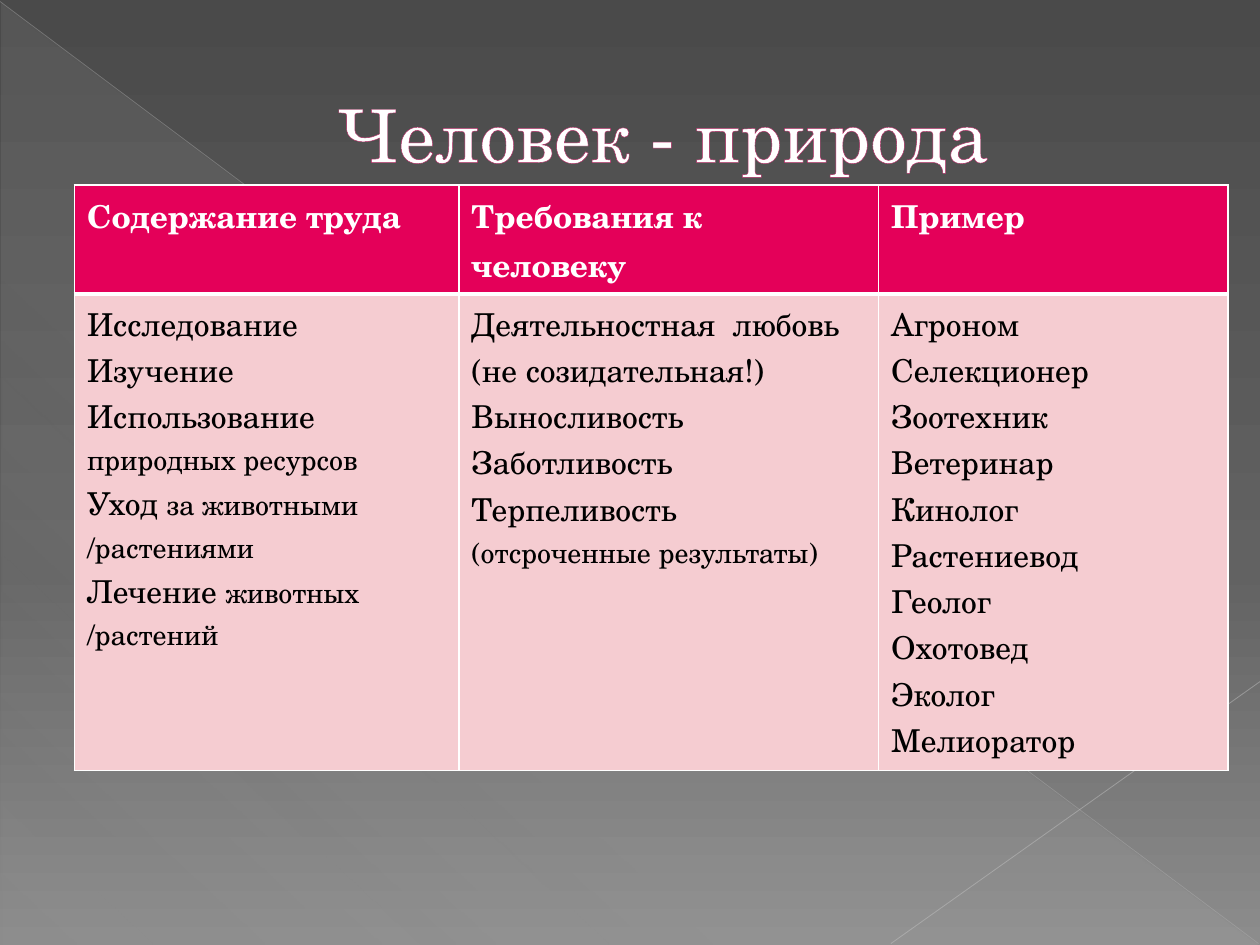
from lxml.etree import SubElement
from pptx import Presentation
from pptx.dml.color import RGBColor
from pptx.enum.shapes import MSO_CONNECTOR, MSO_SHAPE
from pptx.enum.text import MSO_ANCHOR, PP_ALIGN
from pptx.oxml.ns import qn
from pptx.util import Cm, Pt

WHITE = RGBColor(0xFF, 0xFF, 0xFF)
BLACK = RGBColor(0x00, 0x00, 0x00)
CRIMSON = RGBColor(0xE4, 0x00, 0x59)
BLUSH = RGBColor(0xF5, 0xCC, 0xD1)
PLUM = RGBColor(0xB1, 0x27, 0x61)
MIST = RGBColor(0xD2, 0xD2, 0xD2)
SILVER = RGBColor(0xBF, 0xBF, 0xBF)
PALE = RGBColor(0xC6, 0xC6, 0xC6)
BACKDROP = [(0, RGBColor(0x4A, 0x4A, 0x4A), 100),
            (60, RGBColor(0x62, 0x62, 0x62), 100),
            (100, RGBColor(0x8C, 0x8C, 0x8C), 100)]
VEIL = [(0, MIST, 10), (70, MIST, 8), (100, MIST, 1)]

SMALL = 16
HEADERS = ["Содержание труда", "Требования к человеку", "Пример"]
# Each paragraph is a list of spans: (text,) or (text, size)
BODY = [
    [[("Исследование",)], [("Изучение",)],
     [("Использование ",), ("природных ресурсов", SMALL)],
     [("Уход ",), ("за животными /растениями", SMALL)],
     [("Лечение ",), ("животных /растений", SMALL)]],
    [[("Деятельностная  любовь (не созидательная!)",)], [("Выносливость",)],
     [("Заботливость",)], [("Терпеливость",)],
     [("(отсроченные результаты)", SMALL)]],
    [[(job,)] for job in ("Агроном", "Селекционер", "Зоотехник", "Ветеринар",
                          "Кинолог", "Растениевод", "Геолог", "Охотовед",
                          "Эколог", "Мелиоратор")],
]


def add_color(parent, color, opacity=100):
    node = SubElement(parent, qn("a:srgbClr"), val=str(color))
    if opacity < 100:
        SubElement(node, qn("a:alpha"), val=str(opacity * 1000))


class SlideBuilder:
    font = "TeX Gyre Schola"
    size = 18

    def __init__(self, page):
        self.page = page

    def gradient(self, fill, element, stops, angle):
        fill.gradient()
        fill.gradient_angle = 360 - angle
        stop_list = next(element.iter(qn("a:gsLst")))
        for stop in list(stop_list):
            stop_list.remove(stop)
        for position, color, opacity in stops:
            stop = SubElement(stop_list, qn("a:gs"), pos=str(position * 1000))
            add_color(stop, color, opacity)

    def background(self, stops, angle):
        self.gradient(self.page.background.fill, self.page.element, stops, angle)

    def triangle(self, left, top, width, height, stops, angle):
        shape = self.page.shapes.add_shape(
            MSO_SHAPE.RIGHT_TRIANGLE, Cm(left), Cm(top), Cm(width), Cm(height))
        shape.shadow.inherit = False
        shape.line.fill.background()
        self.gradient(shape.fill, shape.element.spPr, stops, angle)

    def line(self, start, end, color, weight, opacity):
        line = self.page.shapes.add_connector(
            MSO_CONNECTOR.STRAIGHT, *map(Cm, start + end))
        line.line.width = Pt(weight)
        line.line.color.rgb = color
        properties = line.element.spPr
        SubElement(next(properties.iter(qn("a:srgbClr"))), qn("a:alpha"),
                   val=str(opacity * 1000))
        SubElement(properties, qn("a:effectLst"))

    def span(self, para, text, color, size=None, bold=False):
        span = para.add_run()
        span.text = text
        style = {"name": self.font, "size": Pt(size or self.size), "bold": bold}
        for name, value in style.items():
            setattr(span.font, name, value)
        span.font.color.rgb = color
        return span

    def title(self, text, left, top, width, height):
        box = self.page.shapes.add_textbox(Cm(left), Cm(top), Cm(width), Cm(height))
        frame = box.text_frame
        for name, value in {"word_wrap": True,
                            "vertical_anchor": MSO_ANCHOR.MIDDLE}.items():
            setattr(frame, name, value)
        para = frame.paragraphs[0]
        para.alignment = PP_ALIGN.CENTER
        properties = para._p.get_or_add_pPr()
        properties.set("marL", str(Cm(1.35)))
        properties.set("indent", "0")
        span = self.span(para, text, WHITE, 42)
        # Thin outline around the letters
        run_style = span._r.get_or_add_rPr()
        outline = SubElement(run_style, qn("a:ln"), w=str(Pt(0.5)))
        add_color(SubElement(outline, qn("a:solidFill")), PLUM)
        run_style.insert(0, outline)

    def cell(self, cell, paragraphs, color, fill, bold, borders):
        for index, spans in enumerate(paragraphs):
            frame = cell.text_frame
            para = frame.add_paragraph() if index else frame.paragraphs[0]
            for span in spans:
                self.span(para, span[0], color, *span[1:], bold=bold)
        properties = cell._tc.get_or_add_tcPr()
        for side, weight in borders.items():
            border = SubElement(properties, qn(f"a:ln{side}"), w=str(Pt(weight)))
            add_color(SubElement(border, qn("a:solidFill")), WHITE)
        cell.fill.solid()
        cell.fill.fore_color.rgb = fill

    def table(self, left, top, widths, heights, headers, body):
        table = self.page.shapes.add_table(
            2, len(widths), Cm(left), Cm(top),
            Cm(sum(widths)), Cm(sum(heights))).table
        for column, width in zip(table.columns, widths):
            column.width = Cm(width)
        for row, height in zip(table.rows, heights):
            row.height = Cm(height)
        thin = {"L": 1, "R": 1, "T": 1, "B": 1}
        for index, (header, paragraphs) in enumerate(zip(headers, body)):
            self.cell(table.cell(0, index), [[(header,)]], WHITE, CRIMSON, True,
                      thin | {"B": 3})
            self.cell(table.cell(1, index), paragraphs, BLACK, BLUSH, False,
                      thin | {"T": 3})


def main():
    deck = Presentation()
    deck.slide_width, deck.slide_height = Cm(25.4), Cm(19.05)
    builder = SlideBuilder(deck.slides.add_slide(deck.slide_layouts[6]))

    # Backdrop
    builder.background(BACKDROP, 90)
    builder.triangle(0.03, 0.05, 25.35, 19, VEIL, 133)
    builder.line((0, 0.03), (25.37, 19.02), SILVER, 0.39, 35)
    builder.line((25.4, 13.74), (17.96, 19.02), PALE, 0.47, 45)

    # Title and table
    builder.title("Человек - природа", 1.27, 0.74, 22.86, 3.89)
    builder.table(1.5, 3.73, [7.75, 8.46, 7.04], [2.2, 9.6], HEADERS, BODY)

    deck.save("out.pptx")


if __name__ == "__main__":
    main()
